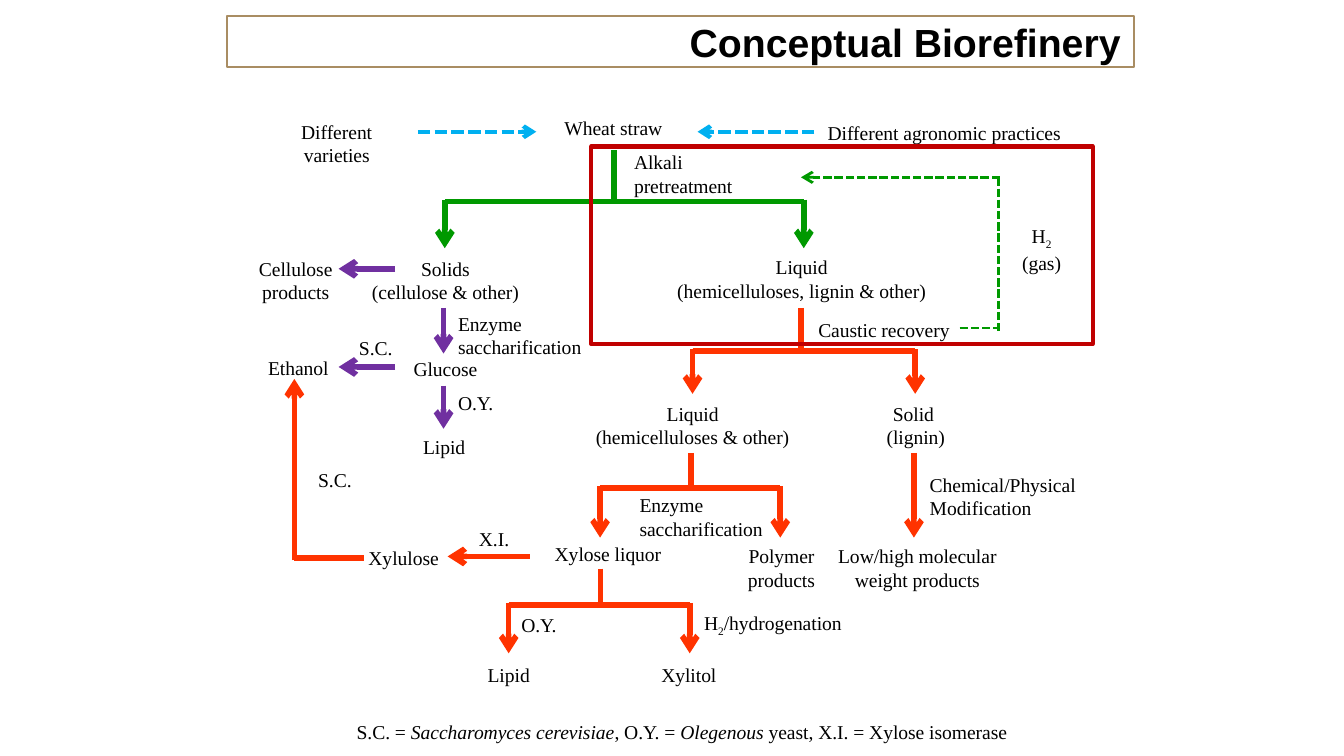
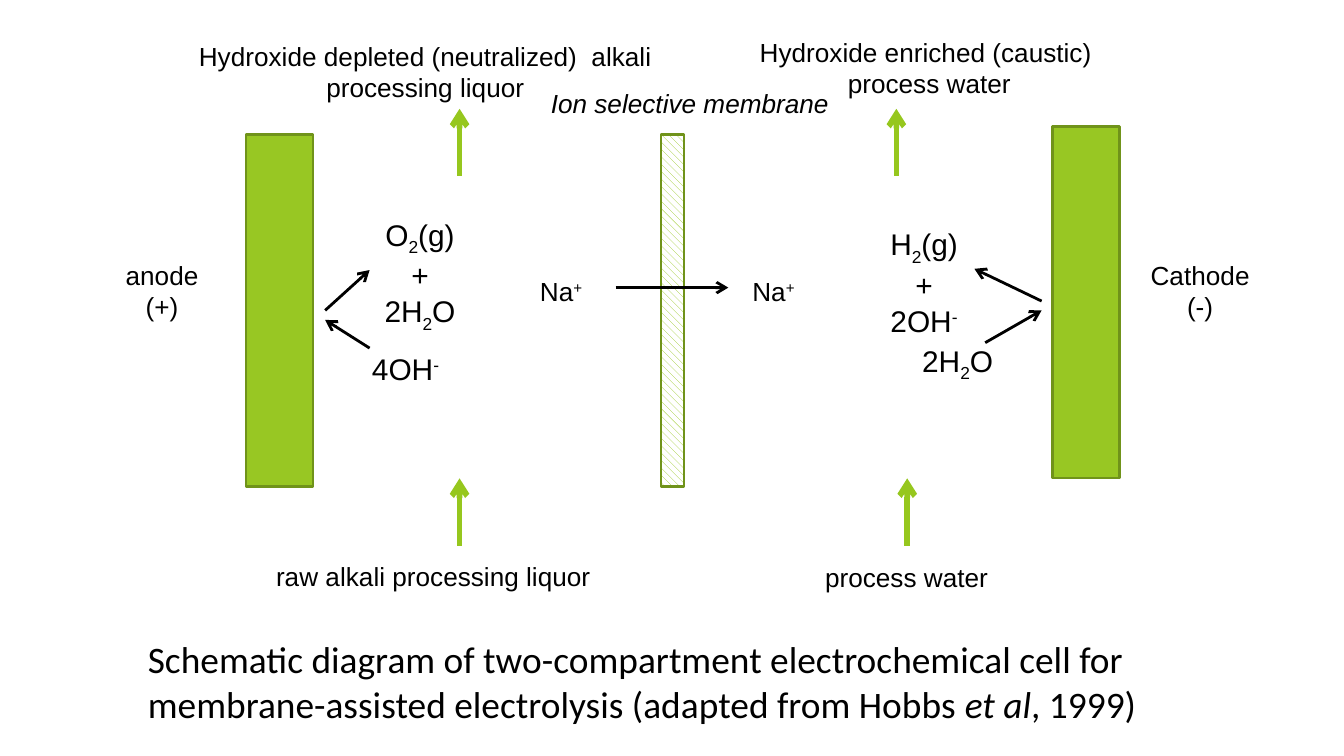
from dataclasses import dataclass

from lxml.etree import SubElement
from pptx import Presentation
from pptx.dml.color import RGBColor
from pptx.enum.dml import MSO_LINE, MSO_PATTERN
from pptx.enum.shapes import MSO_CONNECTOR, MSO_SHAPE
from pptx.enum.text import MSO_ANCHOR, MSO_AUTO_SIZE, PP_ALIGN
from pptx.oxml.ns import qn
from pptx.shapes.autoshape import Shape
from pptx.slide import Slide
from pptx.text.text import TextFrame
from pptx.util import Pt

BLACK = RGBColor(0x00, 0x00, 0x00)
WHITE = RGBColor(0xFF, 0xFF, 0xFF)
TAN = RGBColor(0xA9, 0x8D, 0x63)
GREEN = RGBColor(0x00, 0x99, 0x00)
PURPLE = RGBColor(0x70, 0x30, 0xA0)
ORANGE = RGBColor(0xFF, 0x33, 0x00)
SKY = RGBColor(0x00, 0xB0, 0xF0)
RED = RGBColor(0xC0, 0x00, 0x00)
LIME = RGBColor(0x98, 0xC7, 0x23)
FLOW_LIME = RGBColor(0x96, 0xC7, 0x1E)
OLIVE = RGBColor(0x70, 0x93, 0x1A)

BASELINES = {"_": "-25000", "^": "30000"}


@dataclass(frozen=True)
class TextStyle:
    font: str
    size: float
    bold: bool = False


@dataclass(frozen=True)
class Label:
    text: str
    left: float
    top: float
    width: float
    lines: int = 1
    align: PP_ALIGN = PP_ALIGN.CENTER
    wrap: bool = True


@dataclass(frozen=True)
class Line:
    start: tuple[float, float]
    end: tuple[float, float]
    color: RGBColor
    weight: float = 3
    arrow: bool = True
    dashed: bool = False


@dataclass(frozen=True)
class Branch:
    stem: float
    top: float
    bar: float
    left: float
    right: float
    tip: float
    color: RGBColor


@dataclass(frozen=True)
class Block:
    left: float
    top: float
    width: float
    height: float


TITLE = TextStyle("Arial", 21, True)
FLOW = TextStyle("Times New Roman", 10.5)
CELL = TextStyle("Arial", 14)
CHEMISTRY = TextStyle("Arial", 16)
CAPTION = TextStyle("Calibri", 20)
LEFT = PP_ALIGN.LEFT


def write_text(frame: TextFrame, text: str, style: TextStyle, align: PP_ALIGN) -> None:
    """Spans are split by |; a leading _, ^ or * marks subscript, superscript or italic."""
    for index, content in enumerate(text.split("\n")):
        para = frame.add_paragraph() if index else frame.paragraphs[0]
        para.alignment = align
        para.space_before = Pt(0)
        for part in content.split("|"):
            mark = part[0] if len(part) > 1 and part[0] in "_^*" else ""
            span = para.add_run()
            span.text = part[len(mark):]
            span.font.name = style.font
            span.font.size = Pt(style.size)
            span.font.bold = style.bold
            span.font.italic = mark == "*"
            span.font.color.rgb = BLACK
            if mark in BASELINES:
                span.font._element.set("baseline", BASELINES[mark])


def place(shape: Shape, block: Block) -> None:
    shape.left, shape.top = Pt(block.left), Pt(block.top)
    shape.width, shape.height = Pt(block.width), Pt(block.height)


def add_label(page: Slide, label: Label, style: TextStyle) -> None:
    height = 7.2 + label.lines * style.size * 1.2
    box = page.shapes.add_textbox(Pt(label.left), Pt(label.top), Pt(label.width), Pt(height))
    frame = box.text_frame
    frame.word_wrap = label.wrap
    frame.auto_size = MSO_AUTO_SIZE.SHAPE_TO_FIT_TEXT
    write_text(frame, label.text, style, label.align)


def add_line(page: Slide, line: Line) -> None:
    points = [Pt(value) for value in (*line.start, *line.end)]
    connector = page.shapes.add_connector(MSO_CONNECTOR.STRAIGHT, *points)
    connector.line.color.rgb = line.color
    connector.line.width = Pt(line.weight)
    if line.dashed:
        connector.line.dash_style = MSO_LINE.SQUARE_DOT
    if line.arrow:
        SubElement(connector.line._get_or_add_ln(), qn("a:tailEnd"), type="arrow")
    SubElement(connector._element.spPr, qn("a:effectLst"))


def add_branch(page: Slide, branch: Branch) -> None:
    add_line(page, Line((branch.stem, branch.top), (branch.stem, branch.bar), branch.color, arrow=False))
    add_line(page, Line((branch.left, branch.bar), (branch.right, branch.bar), branch.color, arrow=False))
    for x in (branch.left, branch.right):
        add_line(page, Line((x, branch.bar - 1), (x, branch.tip), branch.color))


def add_block(page: Slide, block: Block, color: RGBColor, weight: float) -> Shape:
    shape = page.shapes.add_shape(MSO_SHAPE.RECTANGLE, 0, 0, 0, 0)
    place(shape, block)
    shape.shadow.inherit = False
    shape.fill.background()
    shape.line.color.rgb = color
    shape.line.width = Pt(weight)
    return shape


def fill_placeholder(shape: Shape, block: Block, text: str, style: TextStyle, align: PP_ALIGN) -> None:
    place(shape, block)
    frame = shape.text_frame
    frame.word_wrap = True
    frame.auto_size = MSO_AUTO_SIZE.NONE
    frame.vertical_anchor = MSO_ANCHOR.MIDDLE
    write_text(frame, text, style, align)


FLOW_LABELS = [
    Label("Solids\n(cellulose & other)", 133.92 + 51.1, 133.9, 107.3, 2),
    Label("Wheat straw", 280, 58.3, 97.2),
    Label("Liquid\n(hemicelluloses, lignin & other)", 351.4, 133.2, 156.2, 2),
    Label("Alkali pretreatment", 332.6, 77, 94.3, 2, LEFT),
    Label("S.C. = |*Saccharomyces cerevisiae|, O.Y. = |*Olegenous| yeast, X.I. = Xylose isomerase",
          148.3, 382.3, 434.2),
    Label("Cellulose products", 124.6, 133.9, 67.7, 2),
    Label("Glucose", 210.2, 187.9, 56.9),
    Label("Lipid", 209.5, 229.7, 56.9),
    Label("S.C.", 182.2, 176.4, 38.2),
    Label("Enzyme saccharification", 238.3, 163.4, 87.1, 2, LEFT),
    Label("O.Y.", 238.3, 205.9, 50.4, 1, LEFT),
    Label("Ethanol", 126, 187.2, 67.7),
    Label("Caustic recovery", 431.3, 167, 101.5, 1, LEFT),
    Label("Liquid\n(hemicelluloses & other)", 307.4, 211.7, 127.4, 2),
    Label("Solid \n(lignin)", 462.2, 211.7, 56.9, 2),
    Label("Chemical/Physical Modification", 491, 249.8, 113.8, 2, LEFT),
    Label("Low/high molecular weight products", 441.4, 288, 100.1, 2),
    Label("H|_2| (gas)", 535.7, 116.6, 44.6, 2),
    Label("Polymer products", 385.9, 288, 65.5, 2),
    Label("Enzyme saccharification", 335.5, 260.6, 87.8, 2, LEFT),
    Label("Xylose liquor", 282.2, 286.6, 87.1),
    Label("Xylulose", 181.4, 288.7, 69.8),
    Label("Lipid", 244.1, 351.4, 56.9),
    Label("O.Y.", 272.2, 324.7, 84.2, 1, LEFT),
    Label("H|_2|/hydrogenation", 370.1, 324, 91.4, 1, LEFT),
    Label("Xylitol", 340.6, 351.4, 56.9),
    Label("S.C.", 163.4, 247, 38.2, 1, LEFT),
    Label("X.I. ", 241.9, 278.6, 48.2),
    Label("Different varieties", 135.4, 60.5, 90, 2),
    Label("Different agronomic practices", 436.3, 61.2, 144, 1, LEFT),
]

BRANCHES = [
    Branch(329, 80.6, 108, 238.3, 430.6, 133, GREEN),
    Branch(429.1, 164.9, 188, 371, 490.3, 211, ORANGE),
    Branch(370.1, 242.6, 261.4, 321.5, 418, 288, ORANGE),
    Branch(321.8, 304.6, 324, 272.5, 369.5, 350, ORANGE),
]

FLOW_LINES = [
    Line((237.6, 164.9), (237.6, 189.4), PURPLE),
    Line((237.6, 206.6), (237.6, 229.7), PURPLE),
    Line((211.7, 144), (181.4, 144), PURPLE),
    Line((211.7, 196.6), (181.4, 196.6), PURPLE),
    Line((489.6, 242.6), (489.6, 288), ORANGE),
    Line((283.7, 298.1), (239.8, 298.1), ORANGE),
    Line((157.7, 300.2), (157.7, 203), ORANGE),
    Line((157.7, 298.8), (195.1, 298.8), ORANGE, arrow=False),
    Line((535, 95), (535, 177.1), GREEN, 1.5, False, True),
    Line((514.1, 175.7), (535.7, 175.7), GREEN, 1.5, False, True),
    Line((535.7, 95), (429.1, 95), GREEN, 1.5, True, True),
    Line((223.9, 70.6), (287.3, 70.6), SKY, 2.25, True, True),
    Line((436.3, 70.6), (373.7, 70.6), SKY, 2.25, True, True),
]

CELL_LABELS = [
    Label("Cathode\n(-)", 609.1, 135.4, 67.7, 2, wrap=False),
    Label("anode\n(+)", 59.8, 135.4, 54, 2, wrap=False),
    Label("Hydroxide depleted (neutralized)  alkali processing liquor", 95.8, 18, 264.2, 2),
    Label("Hydroxide enriched (caustic) \nprocess water", 383.8, 15.8, 228.2, 2),
    Label("raw alkali processing liquor", 116.6, 296.9, 231.1),
    Label("*Ion selective membrane", 288, 43.2, 167.8, 1, LEFT),
    Label("Na|^+", 282.2, 144, 48.2, 1, LEFT),
    Label("Na|^+", 396, 144, 48.2, 1, LEFT),
    Label("process water", 401.8, 297.4, 167.8),
]

CHEMISTRY_LABELS = [
    Label("4OH|^-", 192.2, 184.3, 54, 1, LEFT),
    Label("O|_2|(g)\n+\n2H|_2|O", 198, 112.3, 54, 3),
    Label("2H|_2|O", 486, 180, 54),
    Label("H|_2|(g)\n+\n2OH|^-", 468, 117.4, 54, 3),
]

STREAMS = [(246.2, 94.3), (246.2, 292.3), (480.2, 94.3), (486, 292.3)]
STREAM_LENGTH = 36

ION_LINES = [
    Line((329.8, 154.1), (390.2, 154.1), BLACK, 1.5),
    Line((198, 186.5), (174.2, 171.4), BLACK, 1.5),
    Line((174.2, 166.3), (198, 144.7), BLACK, 1.5),
    Line((527.8, 183.6), (558, 166.3), BLACK, 1.5),
    Line((558, 161.3), (522, 144), BLACK, 1.5),
]

ELECTRODES = [Block(131.8, 72, 36, 188.6), Block(563.8, 67.7, 36, 188.6)]
MEMBRANE = Block(354.2, 72, 12.2, 188.6)


def build_biorefinery(page: Slide) -> None:
    title = page.shapes.title
    fill_placeholder(title, Block(121.7, 8.6, 486, 27.4), "Conceptual Biorefinery", TITLE, PP_ALIGN.RIGHT)
    title.fill.solid()
    title.fill.fore_color.rgb = WHITE
    title.line.color.rgb = TAN
    title.line.width = Pt(1.25)
    for branch in BRANCHES:
        add_branch(page, branch)
    for line in FLOW_LINES:
        add_line(page, line)
    for label in FLOW_LABELS:
        add_label(page, label, FLOW)
    add_block(page, Block(316.8, 78.5, 268.6, 105.8), RED, 2.25)


def build_cell(page: Slide) -> None:
    title = page.shapes.title._element
    title.getparent().remove(title)
    caption = page.placeholders[1]
    fill_placeholder(
        caption, Block(72, 346.3, 599.8, 37.4),
        "Schematic diagram of two-compartment electrochemical cell for membrane-assisted "
        "electrolysis (adapted from Hobbs |*et al|, 1999)", CAPTION, LEFT)
    properties = caption.text_frame.paragraphs[0]._p.get_or_add_pPr()
    properties.set("marL", "0")
    properties.set("indent", "0")
    SubElement(properties, qn("a:buNone"))
    for electrode in ELECTRODES:
        shape = add_block(page, electrode, OLIVE, 1.25)
        shape.fill.solid()
        shape.fill.fore_color.rgb = LIME
    membrane = add_block(page, MEMBRANE, OLIVE, 1.25)
    membrane.fill.patterned()
    membrane.fill.pattern = MSO_PATTERN.WIDE_DOWNWARD_DIAGONAL
    membrane.fill.fore_color.rgb = LIME
    membrane.fill.back_color.rgb = WHITE
    for x, bottom in STREAMS:
        add_line(page, Line((x, bottom), (x, bottom - STREAM_LENGTH), FLOW_LIME))
    for line in ION_LINES:
        add_line(page, line)
    for labels, style in ((CELL_LABELS, CELL), (CHEMISTRY_LABELS, CHEMISTRY)):
        for label in labels:
            add_label(page, label, style)


def main() -> None:
    deck = Presentation()
    deck.slide_width, deck.slide_height = Pt(720), Pt(405)
    title_only, title_and_content = deck.slide_layouts[5], deck.slide_layouts[1]
    build_biorefinery(deck.slides.add_slide(title_only))
    build_cell(deck.slides.add_slide(title_and_content))
    deck.save("out.pptx")


if __name__ == "__main__":
    main()
